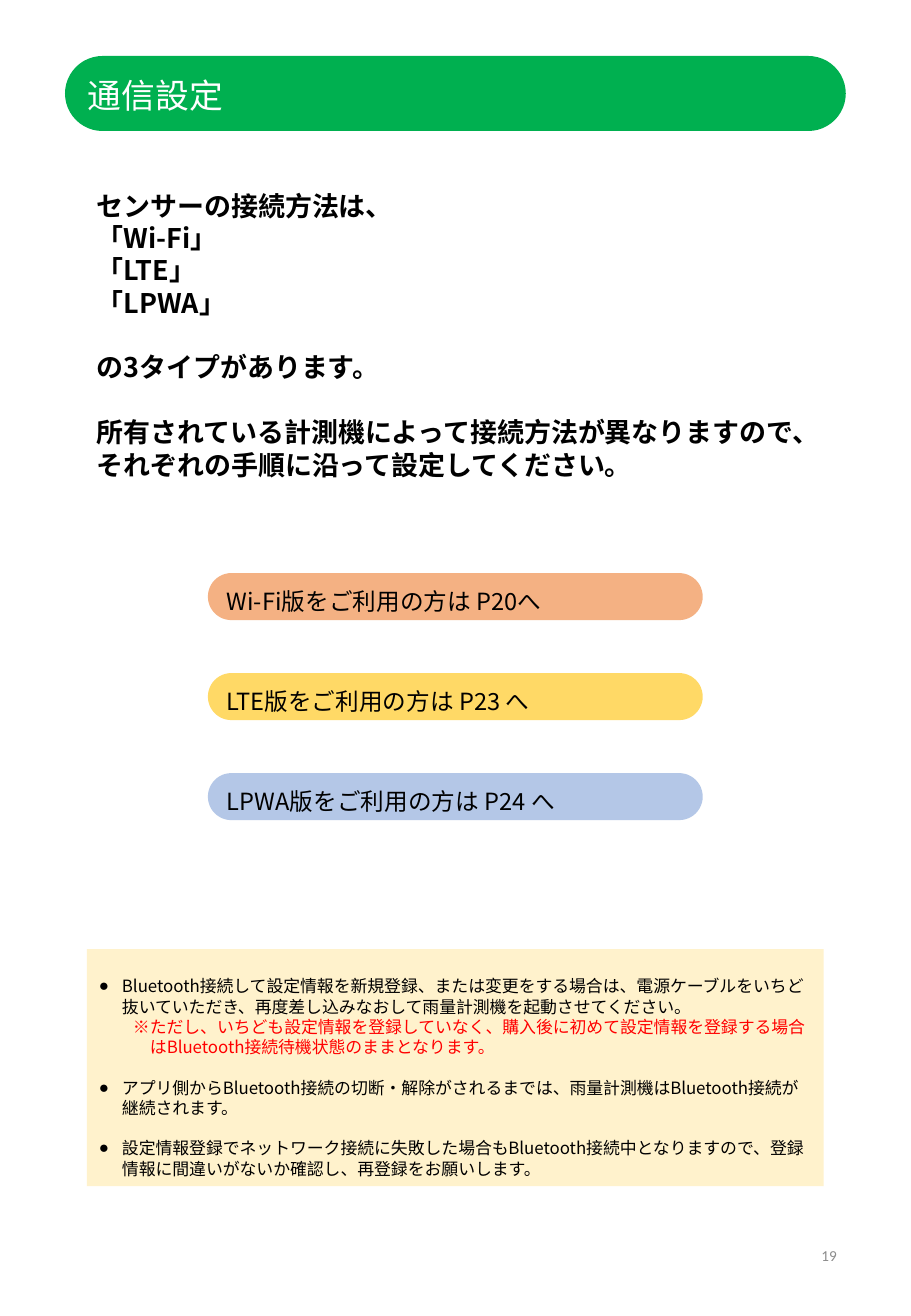
from lxml import etree
from pptx import Presentation
from pptx import util as u
from pptx.dml.color import RGBColor
from pptx.enum import shapes, text
from pptx.oxml import ns

BLACK = RGBColor(0x00, 0x00, 0x00)
WHITE = RGBColor(0xFF, 0xFF, 0xFF)
RED = RGBColor(0xFF, 0x00, 0x00)
GREY = RGBColor(0x8C, 0x8C, 0x8C)
GREEN = RGBColor(0x00, 0xB0, 0x50)
ORANGE = RGBColor(0xF4, 0xB1, 0x83)
YELLOW = RGBColor(0xFF, 0xD9, 0x66)
BLUE = RGBColor(0xB4, 0xC7, 0xE7)
CREAM = RGBColor(0xFF, 0xF2, 0xCC)
JAPANESE = "Noto Sans CJK JP"

TITLE = "通信設定"
# Each paragraph: text, blank line before it
INTRO = [
    ("センサーの接続方法は、", False),
    ("「Wi-Fi」", False),
    ("「LTE」", False),
    ("「LPWA」", False),
    ("の3タイプがあります。", True),
    ("所有されている計測機によって接続方法が異なりますので、それぞれの手順に沿って設定してください。", True),
]
PAGE_GUIDES = [
    ("Wi-Fi版をご利用の方は P20へ", ORANGE),
    ("LTE版をご利用の方は P23 へ", YELLOW),
    ("LPWA版をご利用の方は P24 へ", BLUE),
]
# Each note: text, blank line before it, is a caution
NOTES = [
    ("Bluetooth接続して設定情報を新規登録、または変更をする場合は、電源ケーブルをいちど抜いていただき、"
     "再度差し込みなおして雨量計測機を起動させてください。", False, False),
    ("※ただし、いちども設定情報を登録していなく、購入後に初めて設定情報を登録する場合\v"
     "はBluetooth接続待機状態のままとなります。", False, True),
    ("アプリ側からBluetooth接続の切断・解除がされるまでは、雨量計測機はBluetooth接続が継続されます。", True, False),
    ("設定情報登録でネットワーク接続に失敗した場合もBluetooth接続中となりますので、"
     "登録情報に間違いがないか確認し、再登録をお願いします。", True, False),
]
PAGE_NUMBER = "19"

GUIDE_TOP, GUIDE_STEP = 573, 100
LINE_RATIO = 1.2


def px(length):
    return u.Emu(round(length * 914400 / 121.5))


def set_up_frame(shape, top_inset):
    frame = shape.text_frame
    frame.word_wrap = True
    frame.vertical_anchor = text.MSO_ANCHOR.TOP
    frame.margin_left = frame.margin_right = px(12)
    frame.margin_top, frame.margin_bottom = px(top_inset), 0
    return frame


def add_panel(slide, kind, box, fill, top_inset):
    panel = slide.shapes.add_shape(kind, *map(px, box))
    panel.shadow.inherit = False
    panel.fill.solid()
    panel.fill.fore_color.rgb = fill
    panel.line.fill.background()
    if kind == shapes.MSO_SHAPE.ROUNDED_RECTANGLE:
        panel.adjustments[0] = 0.5
    return set_up_frame(panel, top_inset)


def add_text(slide, box, top_inset):
    return set_up_frame(slide.shapes.add_textbox(*map(px, box)), top_inset)


def write(paragraph, words, size, color, font=JAPANESE, bold=False, gap=False):
    """Fill one paragraph; gap leaves one line free above it."""
    paragraph.text = words
    paragraph.alignment = text.PP_ALIGN.LEFT
    paragraph.line_spacing = u.Pt(size * LINE_RATIO)
    if gap:
        paragraph.space_before = u.Pt(size * LINE_RATIO)
    for run in paragraph.runs:
        run.font.size, run.font.bold, run.font.name = u.Pt(size), bold, font
        run.font.color.rgb = color
        east_asian = etree.SubElement(run.font._element, ns.qn("a:ea"))
        east_asian.set("typeface", font)


def hang(paragraph, left, first, bullet=None):
    properties = paragraph._p.get_or_add_pPr()
    properties.set("marL", str(px(left)))
    properties.set("indent", str(px(first)))
    if bullet:
        etree.SubElement(properties, ns.qn("a:buFont")).set("typeface", "Arial")
        etree.SubElement(properties, ns.qn("a:buChar")).set("char", bullet)


def paragraphs(frame, count):
    return [frame.paragraphs[0]] + [frame.add_paragraph() for _ in range(count - 1)]


def main():
    deck = Presentation()
    deck.slide_width, deck.slide_height = u.Inches(7.5), u.Inches(10.83)
    slide = deck.slides.add_slide(deck.slide_layouts[6])
    pill = shapes.MSO_SHAPE.ROUNDED_RECTANGLE

    title = add_panel(slide, pill, (65, 56, 781, 75), GREEN, 8)
    write(title.paragraphs[0], TITLE, 20, WHITE)

    intro = add_text(slide, (85, 182, 758, 306), 7)
    for paragraph, (words, gap) in zip(paragraphs(intro, len(INTRO)), INTRO):
        write(paragraph, words, 16, BLACK, bold=True, gap=gap)

    for row, (words, fill) in enumerate(PAGE_GUIDES):
        box = (208, GUIDE_TOP + row * GUIDE_STEP, 495, 47)
        guide = add_panel(slide, pill, box, fill, 7)
        write(guide.paragraphs[0], words, 14, BLACK)

    notes = add_panel(slide, shapes.MSO_SHAPE.RECTANGLE, (87, 949, 737, 237), CREAM, 27)
    for paragraph, (words, gap, caution) in zip(paragraphs(notes, len(NOTES)), NOTES):
        write(paragraph, words, 10, RED if caution else BLACK, gap=gap)
        if caution:
            hang(paragraph, 51, -17)
        else:
            hang(paragraph, 23, -23, "●")

    number = add_text(slide, (644, 1220, 205, 70), 0)
    number.vertical_anchor = text.MSO_ANCHOR.MIDDLE
    write(number.paragraphs[0], PAGE_NUMBER, 9, GREY, font="Calibri")
    number.paragraphs[0].alignment = text.PP_ALIGN.RIGHT

    deck.save("out.pptx")


if __name__ == "__main__":
    main()
